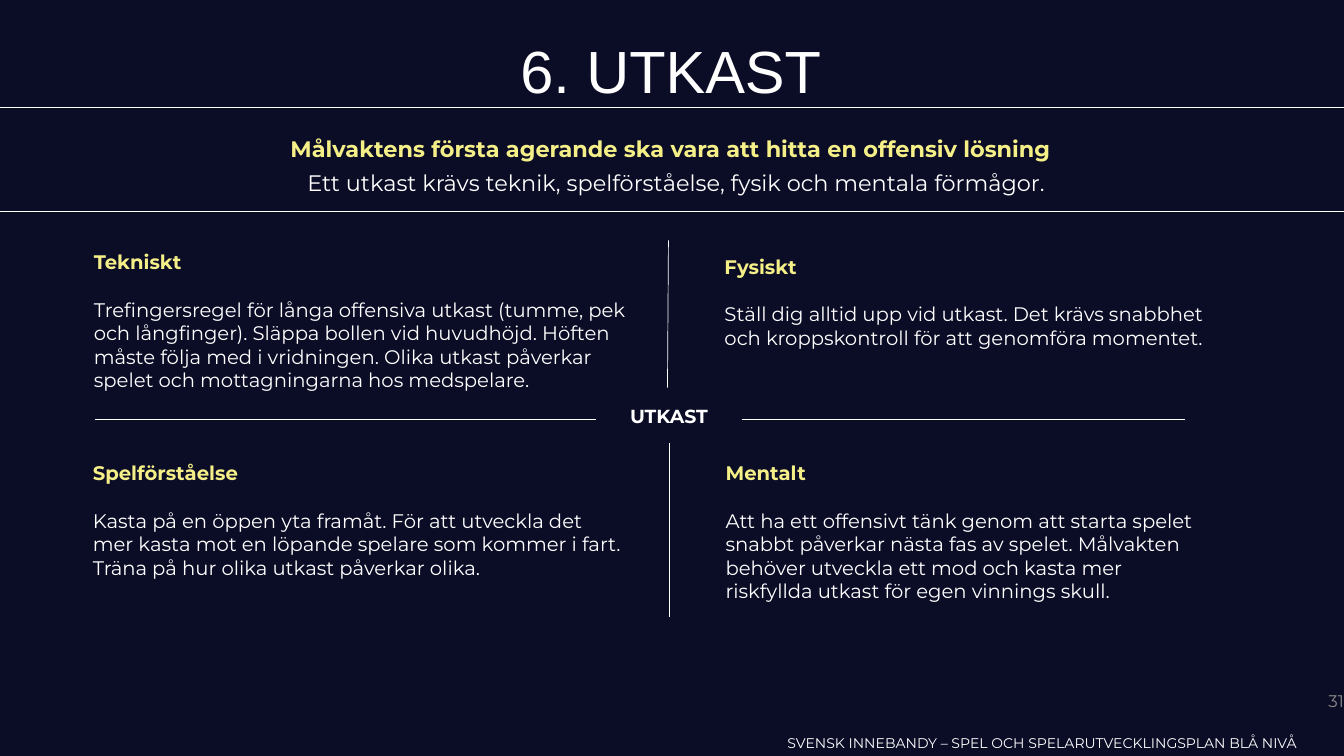
"""Build the slide on goalkeeper throws: a heading band, four quadrants and a centre label."""
from dataclasses import dataclass

from lxml import etree
from pptx import Presentation
from pptx.dml.color import RGBColor
from pptx.enum.shapes import MSO_CONNECTOR, MSO_SHAPE
from pptx.enum.text import MSO_ANCHOR, PP_ALIGN
from pptx.oxml.ns import qn
from pptx.util import Pt

STRAIGHT = MSO_CONNECTOR.STRAIGHT
ROUNDED = MSO_SHAPE.ROUNDED_RECTANGLE
TOP, MIDDLE = MSO_ANCHOR.TOP, MSO_ANCHOR.MIDDLE
LEFT, CENTER, RIGHT = PP_ALIGN.LEFT, PP_ALIGN.CENTER, PP_ALIGN.RIGHT


@dataclass(frozen=True)
class Theme:
    """Colours, fonts and type sizes."""
    background: str = "0B0C26"
    text: str = "FFFFFF"
    accent: str = "F5EF88"
    muted: str = "8C8C8C"
    title_font: str = "Arial"
    body_font: str = "Montserrat"
    title: float = 85
    lead: float = 32
    body: float = 28
    label: float = 27
    number: float = 24
    footer: float = 20


THEME = Theme()
WIDTH, HEIGHT = 1919.5, 1080
QUADRANT_HEIGHT = 227.5
BODY_GAP = 34
TITLE_GAP = 42

TITLE = "6. UTKAST"
LEAD = "Målvaktens första agerande ska vara att hitta en offensiv lösning"
SUBLEAD = "Ett utkast krävs teknik, spelförståelse, fysik och mentala förmågor."
LABEL = "UTKAST"
FOOTER = "SVENSK INNEBANDY – SPEL OCH SPELARUTVECKLINGSPLAN BLÅ NIVÅ"
NUMBER = "31"

QUADRANTS = [
    ("Tekniskt",
     "Trefingersregel för långa offensiva utkast (tumme, pek och långfinger). "
     "Släppa bollen vid huvudhöjd. Höften måste följa med i vridningen. "
     "Olika utkast påverkar spelet och mottagningarna hos medspelare.",
     (115.9, 342.7, 796.3)),
    ("Fysiskt",
     "Ställ dig alltid upp vid utkast. Det krävs snabbhet och kroppskontroll "
     "för att genomföra momentet.",
     (1016.6, 349.2, 746.6)),
    ("Spelförståelse",
     "Kasta på en öppen yta framåt. För att utveckla det mer kasta mot en "
     "löpande spelare som kommer i fart. Träna på hur olika utkast påverkar olika.",
     (114.5, 644.4, 797)),
    ("Mentalt",
     "Att ha ett offensivt tänk genom att starta spelet snabbt påverkar nästa "
     "fas av spelet. Målvakten behöver utveckla ett mod och kasta mer "
     "riskfyllda utkast för egen vinnings skull.",
     (1018.1, 644.4, 704.2)),
]

LINES = [
    (0, 153.4, WIDTH, 153.4, 0.5),
    (0, 301.7, WIDTH, 301.7, 0.5),
    (136.1, 599, 851, 599, 0.5),
    (1059.1, 599, 1692, 599, 0.5),
    (954.7, 343.4, 953.3, 553.7, 1),
    (955.4, 632.9, 955.4, 882, 1),
]


def add_container(slide, box, rounded=False, anchor=TOP):
    """Add an unfilled text container and return its text frame."""
    lengths = [Pt(value) for value in box]
    if rounded:
        shape = slide.shapes.add_shape(ROUNDED, *lengths)
        shape.shadow.inherit = False
        shape.fill.background()
        shape.line.fill.background()
    else:
        shape = slide.shapes.add_textbox(*lengths)
    frame = shape.text_frame
    frame.word_wrap = True
    frame.vertical_anchor = anchor
    return frame


def write(frame, text, size=THEME.body, color=THEME.text, font=THEME.body_font,
          bold=False, align=LEFT, before=0):
    """Write one formatted paragraph, reusing the empty first one."""
    first = frame.paragraphs[0]
    paragraph = frame.add_paragraph() if first.runs else first
    paragraph.alignment = align
    if before:
        paragraph.space_before = Pt(before)
    run = paragraph.add_run()
    run.text = text
    run.font.size = Pt(size)
    run.font.name = font
    run.font.bold = bold
    run.font.color.rgb = RGBColor.from_string(color)


def add_line(slide, x1, y1, x2, y2, weight):
    """Add a straight line without a shadow."""
    line = slide.shapes.add_connector(STRAIGHT, Pt(x1), Pt(y1), Pt(x2), Pt(y2))
    line.line.width = Pt(weight)
    line.line.color.rgb = RGBColor.from_string(THEME.text)
    etree.SubElement(line._element.spPr, qn("a:effectLst"))


def main():
    """Assemble and save the slide."""
    presentation = Presentation()
    presentation.slide_width, presentation.slide_height = Pt(WIDTH), Pt(HEIGHT)
    slide = presentation.slides.add_slide(presentation.slide_layouts[6])
    slide.background.fill.solid()
    slide.background.fill.fore_color.rgb = RGBColor.from_string(THEME.background)

    frame = add_container(slide, (1117.4, 1046.2, 800, 31.7))
    write(frame, FOOTER, size=THEME.footer)

    for heading, body, place in QUADRANTS:
        frame = add_container(slide, (*place, QUADRANT_HEIGHT), rounded=True)
        write(frame, heading, color=THEME.accent, bold=True)
        write(frame, body, before=BODY_GAP)

    frame = add_container(slide, (774, 488.2, 362.9, 212.4), rounded=True, anchor=MIDDLE)
    write(frame, LABEL, size=THEME.label, bold=True, align=CENTER)

    frame = add_container(slide, (342, 45, 1231.9, 185))
    write(frame, TITLE, size=THEME.title, font=THEME.title_font, align=CENTER)
    write(frame, LEAD, size=THEME.lead, color=THEME.accent, bold=True, align=CENTER,
          before=TITLE_GAP)

    frame = add_container(slide, (326.9, 238.3, 1278, 46.1))
    write(frame, SUBLEAD, size=THEME.lead, align=CENTER)

    for line in LINES:
        add_line(slide, *line)

    frame = add_container(slide, (1811.5, 972.7, 108, 57.6), anchor=MIDDLE)
    frame.margin_right = 0
    write(frame, NUMBER, size=THEME.number, color=THEME.muted, align=RIGHT)

    presentation.save("out.pptx")


if __name__ == "__main__":
    main()
